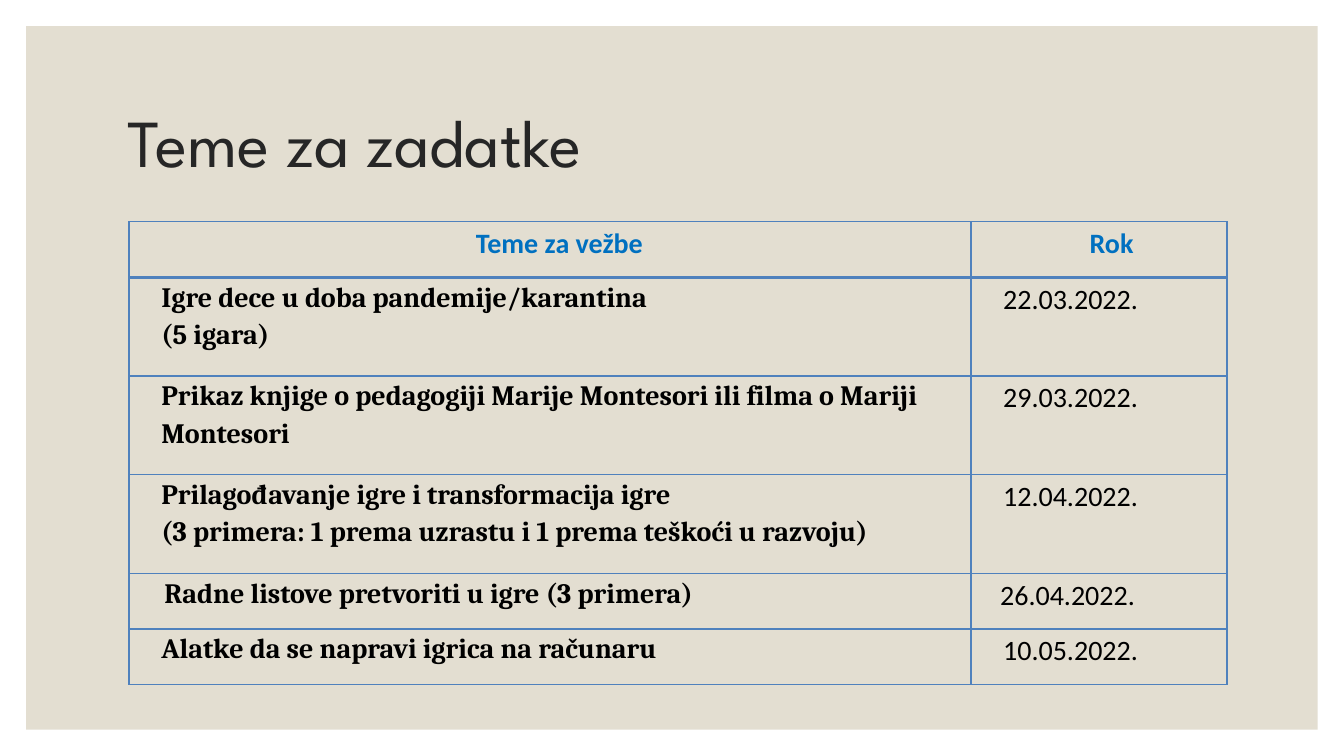
import pptx
import pptx.util
import pptx.dml.color
import pptx.enum.shapes
import pptx.enum.text
from lxml import etree

Inch, Pt = pptx.util.Inches, pptx.util.Pt
ALIGN = pptx.enum.text.PP_ALIGN
WIDE, HIGH = 13.33, 7.5
EDGE = 0.26
LINE = "4F81BD"
COLS = (8.35, 2.54)
ONE, TWO = 0.55, 0.98  # heights of rows with one and two lines of text
HEAD = ("Teme za vežbe ", "Rok")
# topic, date, row height, indent
TASKS = (
    ("Igre dece u doba pandemije/karantina\n(5 igara)", "22.03.2022.", TWO, 0.25),
    ("Prikaz knjige o pedagogiji Marije Montesori ili filma o Mariji Montesori",
     "29.03.2022.", TWO, 0.25),
    ("Prilagođavanje igre i transformacija igre\n"
     "(3 primera: 1 prema uzrastu i 1 prema teškoći u razvoju)",
     "12.04.2022.", TWO, 0.25),
    (" Radne listove pretvoriti u igre (3 primera)", "26.04.2022.", ONE, 0.22),
    ("Alatke da se napravi igrica na računaru", "10.05.2022.", ONE, 0.25),
)
HEADING = dict(name="Calibri", size=Pt(20), bold=True)
TOPIC = dict(name="Cambria", size=Pt(20), bold=True)
DATE = dict(name="Calibri", size=Pt(20), bold=False)


def tint(code):
    return pptx.dml.color.RGBColor.from_string(code)


def write(frame, text, font, color, space, indent=0, align=ALIGN.LEFT):
    """Fill a text frame, one paragraph for each line of text."""
    frame.text = text
    for para in frame.paragraphs:
        para.alignment = align
        para.line_spacing = space
        para._p.get_or_add_pPr().set("marL", str(Inch(indent)))
        for run in para.runs:
            run.font.color.rgb = tint(color)
            for key, value in font.items():
                setattr(run.font, key, value)


def border(cell, widths):
    """Draw the cell's left, right, top and bottom lines."""
    props = cell._tc.get_or_add_tcPr()
    for side, width in zip("LRTB", widths):
        props.append(pptx.oxml.parse_xml(
            '<a:ln%s xmlns:a="http://schemas.openxmlformats.org/drawingml/2006/main"'
            ' w="%d"><a:solidFill><a:srgbClr val="%s"/></a:solidFill></a:ln%s>'
            % (side, Pt(width), LINE, side)))


def panel(slide):
    box = slide.shapes.add_shape(
        pptx.enum.shapes.MSO_SHAPE.RECTANGLE, Inch(EDGE), Inch(EDGE),
        Inch(WIDE - 2 * EDGE), Inch(HIGH - 2 * EDGE))
    box.shadow.inherit = False
    box.fill.solid()
    box.fill.fore_color.rgb = tint("E3DED1")
    box.line.fill.background()


def title(slide, text):
    box = slide.shapes.add_textbox(Inch(1.17), Inch(0.7), Inch(11), Inch(1.5))
    frame = box.text_frame
    frame.word_wrap = True
    frame.vertical_anchor = pptx.enum.text.MSO_ANCHOR.MIDDLE
    write(frame, text, dict(name="League Spartan", size=Pt(48)), "262626", 0.9)


def plan(slide):
    """Add the table of topics and dates."""
    highs = [ONE] + [task[2] for task in TASKS]
    table = slide.shapes.add_table(
        len(highs), len(COLS), Inch(1.28), Inch(2.2),
        Inch(sum(COLS)), Inch(sum(highs))).table
    table.horz_banding = False
    for col, width in zip(table.columns, COLS):
        col.width = Inch(width)
    for row, high in zip(table.rows, highs):
        row.height = Inch(high)
    for r in range(len(highs)):
        for c in range(len(COLS)):
            cell = table.cell(r, c)
            border(cell, (1, 1, 2.25 if r == 1 else 1, 2.25 if r == 0 else 1))
            cell.fill.background()
            cell.margin_left = cell.margin_right = Inch(0.07)
            cell.margin_top = cell.margin_bottom = 0
            if r == 0:
                write(cell.text_frame, HEAD[c], HEADING, "0070C0", 1.15, 0.25,
                      ALIGN.CENTER)
            else:
                task = TASKS[r - 1]
                write(cell.text_frame, task[c], (TOPIC, DATE)[c], "000000",
                      1.15, task[3])


def main():
    deck = pptx.Presentation()
    deck.slide_width, deck.slide_height = Inch(WIDE), Inch(HIGH)
    slide = deck.slides.add_slide(deck.slide_layouts[6])
    panel(slide)
    title(slide, "Teme za zadatke")
    plan(slide)
    deck.save("out.pptx")


if __name__ == "__main__":
    main()
